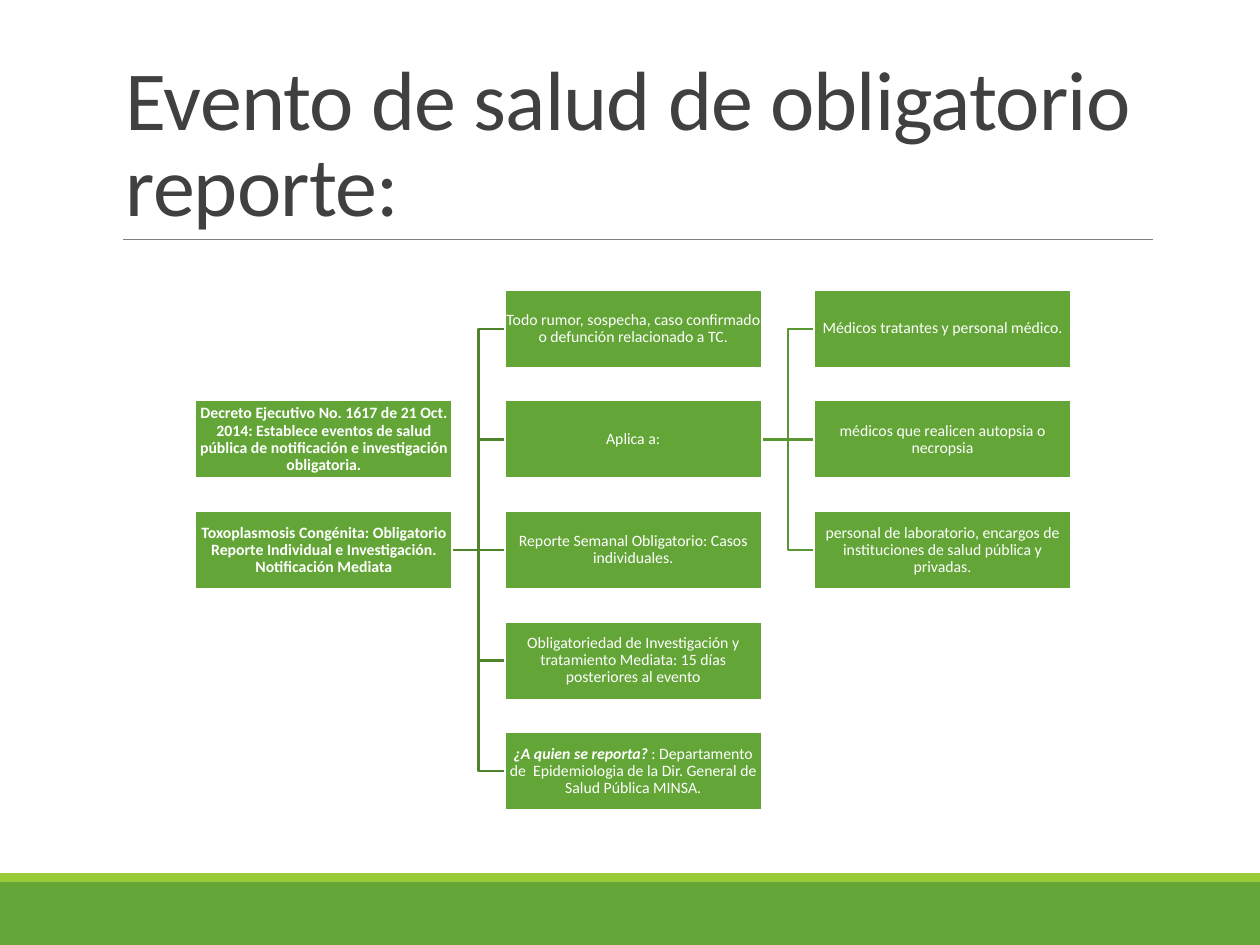
from lxml.etree import SubElement
from pptx import Presentation
from pptx.dml.color import RGBColor
from pptx.enum.shapes import MSO_CONNECTOR, MSO_SHAPE
from pptx.enum.text import MSO_ANCHOR, PP_ALIGN
from pptx.oxml.ns import qn
from pptx.util import Inches, Pt

WIDTH, HEIGHT = 10, 7.5
GREEN, LIME, WHITE = "63A537", "99CB38", "FFFFFF"
COLUMNS, ROWS = 3, 5
BOX_W, BOX_H = 2.04, 0.62

# (column, row): runs of (text, format)
BOLD = {"bold": True}
BOXES = {
    (0, 1): [("Decreto Ejecutivo No. 1617 de 21 Oct. 2014: Establece eventos de salud "
              "pública de notificación e investigación obligatoria.", BOLD)],
    (0, 2): [("Toxoplasmosis Congénita: Obligatorio Reporte Individual e Investigación. "
              "Notificación Mediata", BOLD)],
    (1, 0): [("Todo rumor, sospecha, caso confirmado o defunción relacionado a TC.", {})],
    (1, 1): [("Aplica a:", {})],
    (1, 2): [("Reporte Semanal Obligatorio: Casos individuales.", {})],
    (1, 3): [("Obligatoriedad de Investigación y tratamiento Mediata: 15 días "
              "posteriores al evento", {})],
    (1, 4): [("¿A quien se reporta?", {"bold": True, "italic": True}),
             (" : Departamento de  Epidemiologia de la Dir. General de Salud Pública "
              "MINSA.", {})],
    (2, 0): [("Médicos tratantes y personal médico.", {})],
    (2, 1): [("médicos que realicen autopsia o necropsia", {})],
    (2, 2): [("personal de laboratorio, encargos de instituciones de salud pública y "
              "privadas.", {})],
}
# parent box, rows of its children in the next column, line colour
BRANCHES = [((0, 2), range(5), "4F842C"), ((1, 1), range(3), "5A9632")]


def rgb(value):
    return RGBColor.from_string(value)


def style_line(s, color, width):
    s.line.color.rgb = rgb(color)
    s.line.width = Pt(width)


def add_rect(slide, x, y, w, h, fill):
    s = slide.shapes.add_shape(MSO_SHAPE.RECTANGLE, *map(Inches, (x, y, w, h)))
    s.shadow.inherit = False
    s.fill.solid()
    s.fill.fore_color.rgb = rgb(fill)
    s.line.fill.background()
    return s


def add_line(slide, x1, y1, x2, y2, color, width):
    s = slide.shapes.add_connector(MSO_CONNECTOR.STRAIGHT, *map(Inches, (x1, y1, x2, y2)))
    style_line(s, color, width)
    SubElement(s._element.spPr, qn("a:effectLst"))
    return s


def write(s, runs, size, color, spacing, align, anchor):
    tf = s.text_frame
    tf.word_wrap = True
    tf.vertical_anchor = anchor
    p = tf.paragraphs[0]
    p.alignment, p.line_spacing = align, spacing
    for text, formats in runs:
        r = p.add_run()
        r.text = text
        r.font.color.rgb = rgb(color)
        for name, value in {"name": "Calibri", "size": Pt(size), **formats}.items():
            setattr(r.font, name, value)
    return p


def add_footer(slide, x, y, w, h):
    stripe = 0.07
    add_rect(slide, x, y + stripe, w, h - stripe, GREEN)
    add_rect(slide, x, y, w, stripe, LIME)


def add_title(slide, x, y, w, h):
    s = slide.shapes.add_textbox(*map(Inches, (x, y, w, h)))
    p = write(s, [("Evento de salud de obligatorio reporte:", {})], 48, "404040",
              0.85, PP_ALIGN.LEFT, MSO_ANCHOR.BOTTOM)
    p.runs[0].font._element.set("spc", "-50")
    add_line(slide, x + 0.08, y + h, x + w, y + h, "808080", 0.5)


def add_box(slide, x, y, runs):
    s = add_rect(slide, x, y, BOX_W, BOX_H, GREEN)
    style_line(s, WHITE, 1.25)
    tf = s.text_frame
    for side in ("left", "top", "right", "bottom"):
        setattr(tf, f"margin_{side}", Inches(0.01))
    write(s, runs, 9, WHITE, 0.9, PP_ALIGN.CENTER, MSO_ANCHOR.MIDDLE)
    return s


def add_link(slide, parent, child, color):
    """Join two boxes, straight in the same row and bent otherwise, behind the boxes."""
    x1, x2 = parent.left + parent.width, child.left
    y1, y2 = (b.top + b.height // 2 for b in (parent, child))
    if y1 == y2:
        s = add_line(slide, 0, 0, 1, 1, color, 1.25)
        s.begin_connect(parent, 3)
        s.end_connect(child, 1)
    else:
        middle = (x1 + x2) // 2
        path_builder = slide.shapes.build_freeform(x1, y1)
        path_builder.add_line_segments([(middle, y1), (middle, y2), (x2, y2)], close=False)
        s = path_builder.convert_to_shape()
        s.shadow.inherit = False
        s.fill.background()
        style_line(s, color, 1.25)
    parent._element.getparent().insert(2, s._element)


def add_tree(slide, x, y, w, h):
    step_x, step_y = (w - BOX_W) / (COLUMNS - 1), (h - BOX_H) / (ROWS - 1)
    boxes = {(col, row): add_box(slide, x + col * step_x, y + row * step_y, runs)
             for (col, row), runs in BOXES.items()}
    for parent, rows, color in BRANCHES:
        for row in rows:
            add_link(slide, boxes[parent], boxes[parent[0] + 1, row], color)


def main():
    prs = Presentation()
    prs.slide_width, prs.slide_height = Inches(WIDTH), Inches(HEIGHT)
    slide = prs.slides.add_slide(prs.slide_layouts[6])
    add_footer(slide, 0, 6.93, WIDTH, HEIGHT - 6.93)
    add_title(slide, 0.9, 0.31, 8.25, 1.59)
    add_tree(slide, 1.55, 2.3, 6.95, 4.13)
    prs.save("out.pptx")


if __name__ == "__main__":
    main()
